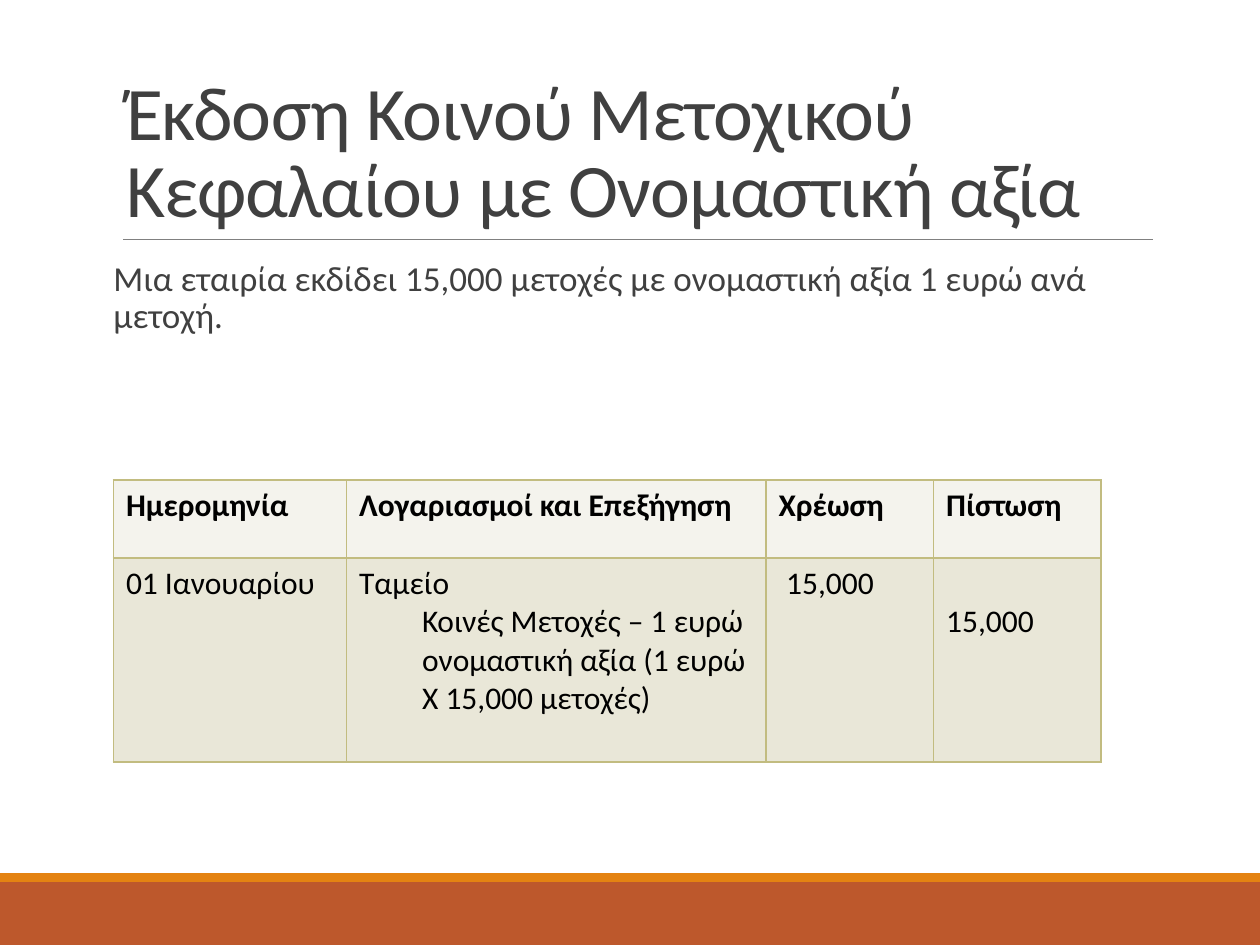
import pptx
import pptx.util
import pptx.dml.color
import pptx.enum.shapes
import pptx.enum.text
import pptx.oxml.ns
from dataclasses import dataclass
from lxml import etree

Inches, Pt = pptx.util.Inches, pptx.util.Pt
W, H = 10, 7.5
LEFT = 0.09 * W
CONTENT_W = 0.825 * W
FONT = "Calibri"
BORDER = "C2BC80"


@dataclass
class Band:
    top: float
    height: float
    colour: str


@dataclass
class Cell:
    lines: list[str]
    pad_left: float = 0.1
    pad_top: float = 0.05


@dataclass
class Row:
    height: float
    fill: str
    bold: bool
    cells: list[Cell]


BANDS = [Band(7, 0.5, "BD582C"), Band(6.93, 0.07, "E48312")]
COLUMNS = [1.85, 3.33, 1.33, 1.33]
HEADINGS = ["Ημερομηνία", "Λογαριασμοί και Επεξήγηση", "Χρέωση", "Πίστωση"]
ROWS = [
    Row(0.62, "F4F3ED", True, [Cell([h]) for h in HEADINGS]),
    Row(1.62, "E9E7D8", False, [
        Cell(["01 Ιανουαρίου"]),
        Cell(["Ταμείο",
              "Κοινές Μετοχές – 1 ευρώ ονομαστική αξία (1 ευρώ Χ 15,000 μετοχές)"]),
        Cell(["15,000"], pad_left=0.16),
        Cell(["15,000"], pad_top=0.35),  # level with the second account line
    ]),
]


def rgb(colour: str) -> pptx.dml.color.RGBColor:
    return pptx.dml.color.RGBColor.from_string(colour)


def sub(parent, tag: str, **attrs: str):
    return etree.SubElement(parent, pptx.oxml.ns.qn(tag), attrs)


def style(p, size: float, colour: str, bold: bool = False) -> None:
    for r in p.runs:
        r.font.name, r.font.size, r.font.bold = FONT, Pt(size), bold
        r.font.color.rgb = rgb(colour)


def draw_band(s, band: Band) -> None:
    sp = s.shapes.add_shape(pptx.enum.shapes.MSO_SHAPE.RECTANGLE, 0,
                            Inches(band.top), Inches(W), Inches(band.height))
    sp.shadow.inherit = False
    sp.fill.solid()
    sp.fill.fore_color.rgb = rgb(band.colour)
    sp.line.fill.background()


def draw_rule(s) -> None:
    line = s.shapes.add_connector(pptx.enum.shapes.MSO_CONNECTOR.STRAIGHT,
                                  Inches(0.98), Inches(1.9), Inches(9.15), Inches(1.9))
    line.line.color.rgb, line.line.width = rgb("808080"), Pt(0.5)
    sub(line._element.spPr, "a:effectLst")


def fill_placeholder(sp, top: float, height: float, text: str, size: float,
                     spacing: float, anchor):
    sp.left, sp.top = Inches(LEFT), Inches(top)
    sp.width, sp.height = Inches(CONTENT_W), Inches(height)
    tf = sp.text_frame
    tf.text = text
    tf.word_wrap, tf.vertical_anchor = True, anchor
    tf.auto_size = pptx.enum.text.MSO_AUTO_SIZE.NONE
    p = tf.paragraphs[0]
    p.alignment, p.line_spacing = pptx.enum.text.PP_ALIGN.LEFT, spacing
    style(p, size, "404040")
    return tf, p


def draw_cell(c, cell: Cell, row: Row) -> None:
    c.margin_left, c.margin_top = Inches(cell.pad_left), Inches(cell.pad_top)
    c.text_frame.text = "\n".join(cell.lines)
    for i, p in enumerate(c.text_frame.paragraphs):
        style(p, 18, "000000", row.bold)
        if i:  # credited account is indented
            p.level = 1
            p._p.get_or_add_pPr().set("marL", str(Inches(0.5)))
    # Borders come before the fill in the cell properties
    tc_pr = c._tc.get_or_add_tcPr()
    for side in ("L", "R", "T", "B"):
        ln = sub(tc_pr, f"a:ln{side}", w=str(Pt(1)))
        sub(sub(ln, "a:solidFill"), "a:srgbClr", val=BORDER)
    c.fill.solid()
    c.fill.fore_color.rgb = rgb(row.fill)


def draw_table(s) -> None:
    frame = s.shapes.add_table(len(ROWS), len(COLUMNS), Inches(LEFT), Inches(3.81),
                               Inches(sum(COLUMNS)), Inches(sum(r.height for r in ROWS)))
    table = frame.table
    table.first_row = table.horz_banding = False
    for col, width in zip(table.columns, COLUMNS):
        col.width = Inches(width)
    for i, row in enumerate(ROWS):
        table.rows[i].height = Inches(row.height)
        for j, cell in enumerate(row.cells):
            draw_cell(table.cell(i, j), cell, row)


def main() -> None:
    prs = pptx.Presentation()
    prs.slide_width, prs.slide_height = Inches(W), Inches(H)
    s = prs.slides.add_slide(prs.slide_layouts[1])
    anchors = pptx.enum.text.MSO_ANCHOR

    # Footer bands and title rule
    for band in BANDS:
        draw_band(s, band)
    draw_rule(s)

    # Title
    _, p = fill_placeholder(s.shapes.title, 0.31, 1.59,
                            "Έκδοση Κοινού Μετοχικού Κεφαλαίου με Ονομαστική αξία",
                            43.2, 0.85, anchors.BOTTOM)
    p.runs[0].font._element.set("spc", "-50")

    # Body text, without bullet
    tf, p = fill_placeholder(s.placeholders[1], 2.02, 4.4,
                             "Μια εταιρία εκδίδει 15,000 μετοχές με ονομαστική αξία "
                             "1 ευρώ ανά μετοχή.", 20, 0.9, anchors.TOP)
    tf.margin_left = tf.margin_right = 0
    p.space_before, p.space_after = Pt(12), Pt(2)
    p_pr = p._p.get_or_add_pPr()
    p_pr.set("marL", "0")
    p_pr.set("indent", "0")
    sub(p_pr, "a:buNone")

    # Journal entry
    draw_table(s)
    prs.save("out.pptx")


if __name__ == "__main__":
    main()
